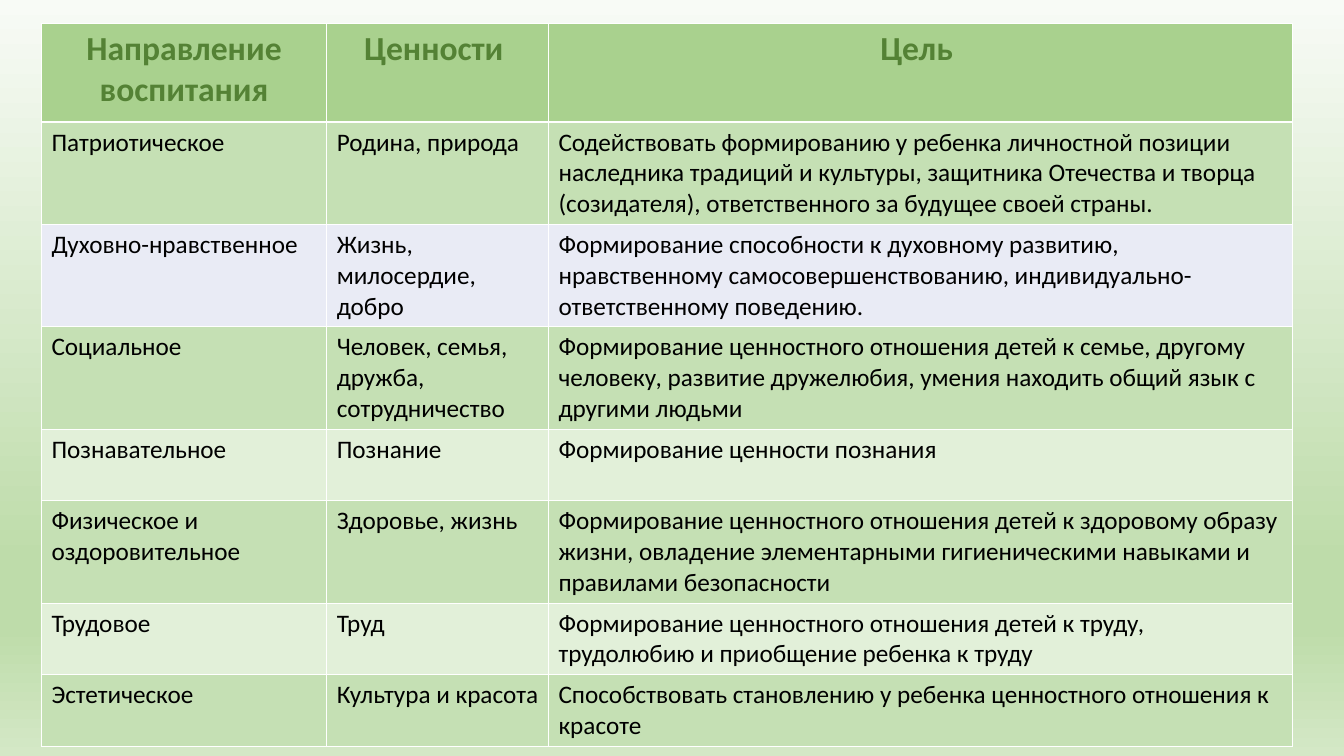
from copy import deepcopy

from pptx import Presentation
from pptx import util as u
from pptx.dml.color import RGBColor
from pptx.enum import text
from pptx.oxml.ns import qn

HEADINGS = ("Направление воспитания", "Ценности ", "Цель ")
DIRECTIONS = [
    ("Патриотическое", "Родина, природа",
     "Содействовать формированию у ребенка личностной позиции наследника традиций и культуры, "
     "защитника Отечества и творца (созидателя), ответственного за будущее своей страны."),
    ("Духовно-нравственное", "Жизнь, милосердие, добро",
     "Формирование способности к духовному развитию, нравственному самосовершенствованию, "
     "индивидуально-ответственному поведению."),
    ("Социальное", "Человек, семья, дружба, сотрудничество",
     "Формирование ценностного отношения детей к семье, другому человеку, развитие дружелюбия, "
     "умения находить общий язык с другими людьми"),
    ("Познавательное", "Познание", "Формирование ценности познания"),
    ("Физическое и оздоровительное", "Здоровье, жизнь",
     "Формирование ценностного отношения детей к здоровому образу жизни, овладение элементарными "
     "гигиеническими навыками и правилами безопасности"),
    ("Трудовое", "Труд",
     "Формирование ценностного отношения детей к труду, трудолюбию и приобщение ребенка к труду"),
    ("Эстетическое", "Культура и красота",
     "Способствовать становлению у ребенка ценностного отношения к красоте"),
]

FONT = "Calibri"
BLACK = RGBColor(0, 0, 0)
DARK_GREEN = RGBColor(0x54, 0x82, 0x35)
HEADER_GREEN = RGBColor(0xA9, 0xD1, 0x8E)
ROW_GREEN = RGBColor(0xC5, 0xE0, 0xB4)
PALE_GREEN = RGBColor(0xE2, 0xF0, 0xD9)
LAVENDER = RGBColor(0xE9, 0xEB, 0xF5)
ROW_FILLS = (ROW_GREEN, LAVENDER, ROW_GREEN, PALE_GREEN, ROW_GREEN, PALE_GREEN, ROW_GREEN)
BACKGROUND_STOPS = [
    (0, RGBColor(0xF8, 0xFB, 0xF6)),
    (74, RGBColor(0xBE, 0xDC, 0xAA)),
    (83, RGBColor(0xBE, 0xDC, 0xAA)),
    (100, RGBColor(0xD4, 0xE8, 0xC6)),
]

LEFT, TOP = 29.6, 16.6
COLUMN_WIDTHS = (203.8, 158.4, 531.4)
HEADER_HEIGHT, ROW_HEIGHT = 70.6, 51.1


def paint_background(page):
    fill = page.background.fill
    fill.gradient()
    fill.gradient_angle = 270
    stop_list = next(page.element.iter(qn("a:gsLst")))
    while len(stop_list) < len(BACKGROUND_STOPS):
        stop_list.append(deepcopy(stop_list[0]))
    for stop, (percent, color) in zip(fill.gradient_stops, BACKGROUND_STOPS):
        stop.position = percent / 100
        stop.color.rgb = color


def write_cell(cell, words, fill, color, size, bold, align):
    cell.fill.solid()
    cell.fill.fore_color.rgb = fill
    para = cell.text_frame.paragraphs[0]
    para.alignment = align
    span = para.add_run()
    span.text = words
    span.font.name = FONT
    span.font.size = u.Pt(size)
    span.font.bold = bold
    span.font.color.rgb = color


deck = Presentation()
deck.slide_width, deck.slide_height = u.Pt(960), u.Pt(540)
page = deck.slides.add_slide(deck.slide_layouts[6])
paint_background(page)

row_heights = [HEADER_HEIGHT] + [ROW_HEIGHT] * len(DIRECTIONS)
table = page.shapes.add_table(
    len(row_heights), len(COLUMN_WIDTHS), u.Pt(LEFT), u.Pt(TOP),
    u.Pt(sum(COLUMN_WIDTHS)), u.Pt(sum(row_heights))).table
for column, width in zip(table.columns, COLUMN_WIDTHS):
    column.width = u.Pt(width)
for row, height in zip(table.rows, row_heights):
    row.height = u.Pt(height)

for cell, heading in zip(table.rows[0].cells, HEADINGS):
    write_cell(cell, heading, HEADER_GREEN, DARK_GREEN, 24, True, text.PP_ALIGN.CENTER)
for number, (direction, fill) in enumerate(zip(DIRECTIONS, ROW_FILLS), start=1):
    for cell, words in zip(table.rows[number].cells, direction):
        write_cell(cell, words, fill, BLACK, 18, False, text.PP_ALIGN.LEFT)

deck.save("out.pptx")
